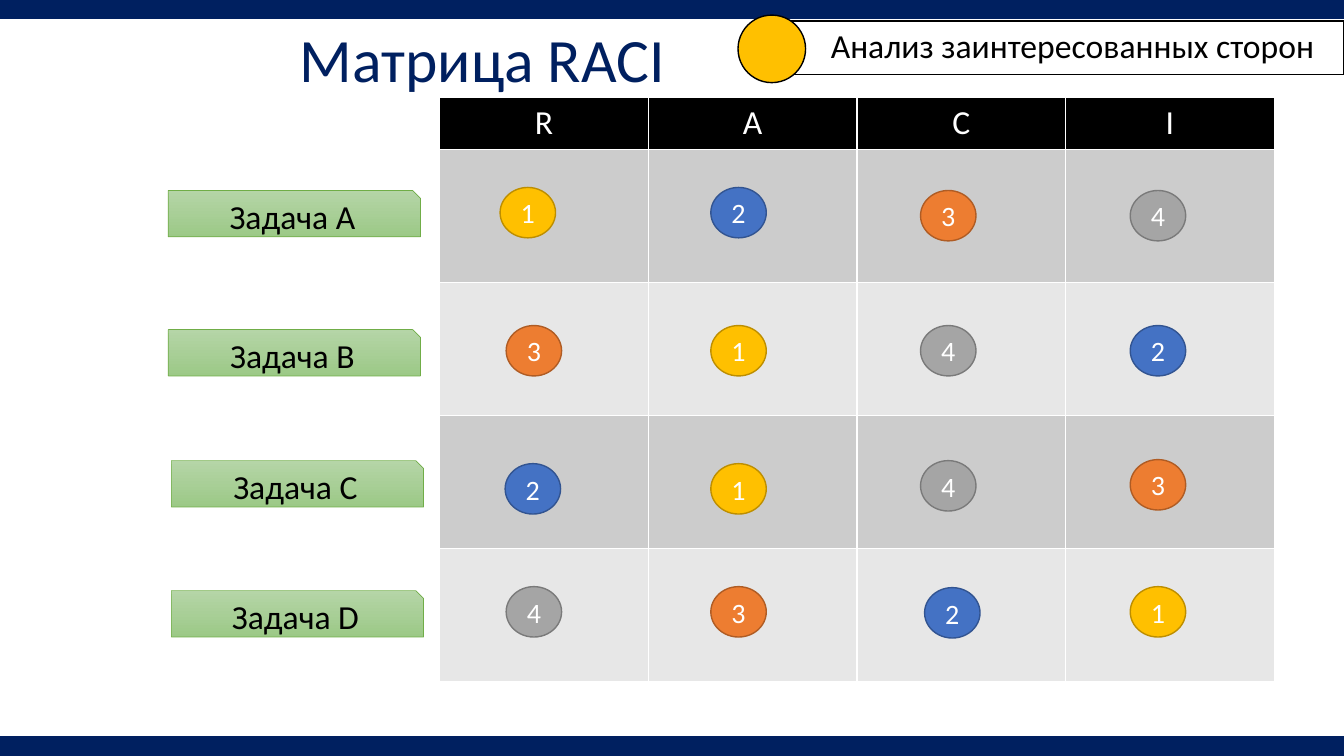
from pptx import Presentation
from pptx import util as u
from pptx.dml.color import RGBColor
from pptx.enum import shapes, text

THEME = {
    "font": "Calibri",
    "title": 44, "body": 24, "chip": 20,
    "navy": "002060", "black": "000000", "white": "FFFFFF", "gold": "FFC000",
    "bands": ("CCCCCC", "E7E7E7"),
    "task": ("B5D5A7", "9CC987"), "task_line": "70AD47",
    # Fill and outline of each numbered participant
    "chips": {1: ("FFC000", "BD8E00"), 2: ("4472C4", "325491"),
              3: ("ED7D31", "AF5C24"), 4: ("A5A5A5", "7A7A7A")},
}
SHAPE = shapes.MSO_SHAPE
CENTER, LEFT = text.PP_ALIGN.CENTER, text.PP_ALIGN.LEFT
rgb = RGBColor.from_string


def write(tf, words, size, color, align=CENTER):
    tf.word_wrap = True
    tf.vertical_anchor = text.MSO_ANCHOR.MIDDLE
    p = tf.paragraphs[0]
    p.text = words
    p.alignment = align
    p.font.name = THEME["font"]
    p.font.size = u.Pt(size)
    p.font.color.rgb = rgb(color)
    return p


def add_box(kind, left, top, width, height, fill, line, line_width=1):
    sp = s.shapes.add_shape(kind, *map(u.Inches, (left, top, width, height)))
    sp.shadow.inherit = False
    if isinstance(fill, tuple):
        sp.fill.gradient()
        sp.fill.gradient_angle = 270
        for stop, color in zip(sp.fill.gradient_stops, fill):
            stop.color.rgb = rgb(color)
    else:
        sp.fill.solid()
        sp.fill.fore_color.rgb = rgb(fill)
    sp.line.color.rgb = rgb(line)
    sp.line.width = u.Pt(line_width)
    return sp


prs = Presentation()
prs.slide_width, prs.slide_height = u.Inches(13.33), u.Inches(7.5)
s = prs.slides.add_slide(prs.slide_layouts[6])

# Bars along the top and bottom edges
for top in (0, 7.31):
    add_box(SHAPE.RECTANGLE, 0, top, 13.33, 0.18, THEME["navy"], THEME["navy"])

# Title
title = s.shapes.add_textbox(*map(u.Inches, (0.87, 0, 7.83, 1.25)))
p = write(title.text_frame, "Матрица RACI", THEME["title"], THEME["navy"])
p.line_spacing = 0.9

# RACI table: one header row, four banded rows
roles = "RACI"
col_w, head_h, row_h = 2.07, 0.51, 1.32
table = s.shapes.add_table(5, 4, *map(u.Inches, (
    4.36, 0.97, 4 * col_w, head_h + 4 * row_h))).table
for col in table.columns:
    col.width = u.Inches(col_w)
for i, row in enumerate(table.rows):
    row.height = u.Inches(row_h if i else head_h)
    for j, cell in enumerate(row.cells):
        cell.fill.solid()
        cell.fill.fore_color.rgb = rgb(THEME["bands"][(i - 1) % 2] if i else THEME["black"])
        if i == 0:
            p = write(cell.text_frame, roles[j], THEME["body"], THEME["white"])
            p.font.bold = False
            cell.vertical_anchor = text.MSO_ANCHOR.TOP

# Tasks: name, label left and top, chip top, then (number, dx, dy) per role
tasks = [
    ("Задача A", 1.67, 1.89, 1.86, [(1, -0.01, 0), (2, 0, 0), (3, 0, 0.03), (4, 0, 0.03)]),
    ("Задача B", 1.67, 3.27, 3.23, [(3, 0.05, 0), (1, 0, 0), (4, 0, 0), (2, 0, 0)]),
    ("Задача C", 1.7, 4.57, 4.56, [(2, 0.04, 0.04), (1, 0, 0.04), (4, 0, 0.01), (3, 0, 0)]),
    ("Задача D", 1.7, 5.86, 5.82, [(4, 0.05, 0), (3, 0, 0), (2, 0.04, 0.01), (1, 0, 0)]),
]
chip_left, chip_step = 4.97, 2.08
for name, left, top, chip_top, chips in tasks:
    label = add_box(SHAPE.SNIP_1_RECTANGLE, left, top, 2.5, 0.46,
                    THEME["task"], THEME["task_line"], 0.5)
    write(label.text_frame, name, THEME["body"], THEME["black"])
    for j, (number, dx, dy) in enumerate(chips):
        chip = add_box(SHAPE.OVAL, chip_left + j * chip_step + dx, chip_top + dy,
                       0.55, 0.5, *THEME["chips"][number])
        write(chip.text_frame, str(number), THEME["chip"], THEME["white"])

# Section banner with its marker
banner = add_box(SHAPE.RECTANGLE, 7.82, 0.21, 5.51, 0.53, THEME["white"], THEME["black"])
tf = banner.text_frame
tf.margin_left = u.Inches(0.42)
tf.margin_top = tf.margin_right = tf.margin_bottom = u.Inches(0.07)
p = write(tf, "Анализ заинтересованных сторон", THEME["body"], THEME["black"], LEFT)
p.line_spacing = 0.9
add_box(SHAPE.OVAL, 7.32, 0.15, 0.67, 0.67, THEME["gold"], THEME["black"])

prs.save("out.pptx")
